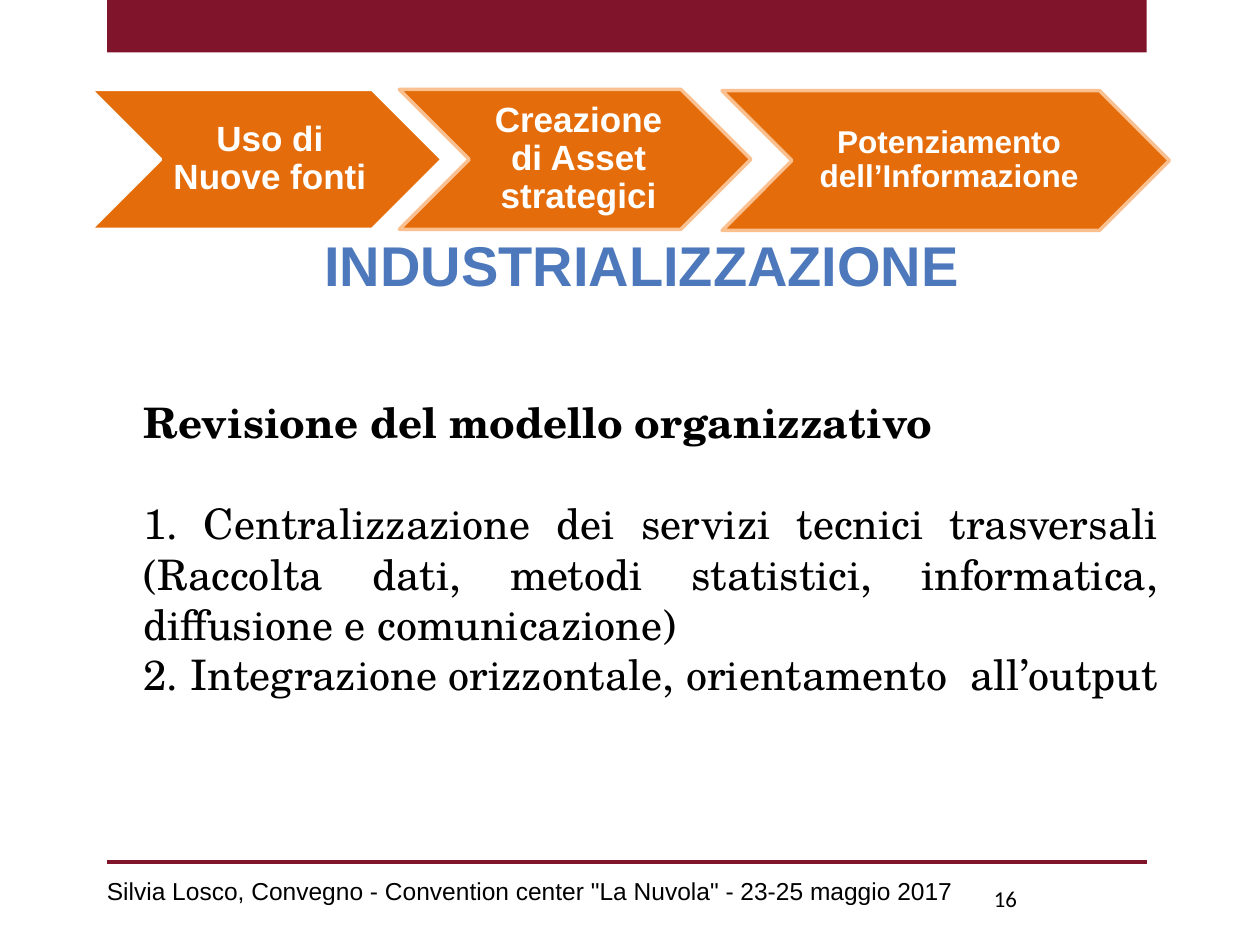
from dataclasses import dataclass

from pptx import Presentation
from pptx.dml.color import RGBColor
from pptx.enum.shapes import MSO_CONNECTOR, MSO_SHAPE
from pptx.enum.text import MSO_ANCHOR, MSO_AUTO_SIZE, PP_ALIGN
from pptx.oxml.ns import qn
from pptx.util import Pt

COLORS = {
    "burgundy": "7F142A",
    "orange": "E46C0A",
    "peach": "FAC090",
    "white": "FFFFFF",
    "black": "000000",
    "blue": "4D79BC",
}
BAR_LEFT, BAR_RIGHT = 61.2, 655.2


@dataclass
class Box:
    left: float
    top: float
    width: float
    height: float


@dataclass
class TextStyle:
    font: str
    size: float
    color: str
    bold: bool = False
    align: PP_ALIGN = PP_ALIGN.LEFT


@dataclass
class Step:
    text: str
    box: Box
    outline: str
    size: float


STEPS = [
    Step("Uso di Nuove fonti", Box(51.8, 51.1, 200.9, 79.9), "white", 20),
    Step("Creazione di Asset strategici", Box(228.2, 51.1, 200.9, 79.9), "peach", 20),
    Step("Potenziamento dell’Informazione", Box(412.6, 51.8, 255.6, 79.9), "peach", 18),
]
BODY_LINES = [
    "1. Centralizzazione dei servizi tecnici trasversali (Raccolta dati, "
    "metodi statistici, informatica, diffusione e comunicazione)",
    "2. Integrazione orizzontale, orientamento  all’output",
]


def rgb(name: str) -> RGBColor:
    return RGBColor.from_string(COLORS[name])


def place(shape, box: Box) -> None:
    shape.left, shape.top = Pt(box.left), Pt(box.top)
    shape.width, shape.height = Pt(box.width), Pt(box.height)


def write(paragraph, text: str, style: TextStyle) -> None:
    paragraph.alignment = style.align
    run = paragraph.add_run()
    run.text = text
    run.font.name = style.font
    run.font.size = Pt(style.size)
    run.font.bold = style.bold
    run.font.color.rgb = rgb(style.color)


def set_up_frame(frame, anchor=MSO_ANCHOR.TOP) -> None:
    frame.word_wrap = True
    frame.auto_size = MSO_AUTO_SIZE.NONE
    frame.vertical_anchor = anchor


def add_label(slide, text: str, box: Box, style: TextStyle) -> None:
    label = slide.shapes.add_textbox(0, 0, 0, 0)
    place(label, box)
    set_up_frame(label.text_frame)
    write(label.text_frame.paragraphs[0], text, style)


def add_filled_shape(slide, kind: MSO_SHAPE, box: Box, fill: str):
    shape = slide.shapes.add_shape(kind, 0, 0, 0, 0)
    place(shape, box)
    shape.shadow.inherit = False
    shape.fill.solid()
    shape.fill.fore_color.rgb = rgb(fill)
    return shape


def add_step(slide, step: Step) -> None:
    chevron = add_filled_shape(slide, MSO_SHAPE.CHEVRON, step.box, "orange")
    chevron.line.color.rgb = rgb(step.outline)
    chevron.line.width = Pt(2)
    frame = chevron.text_frame
    set_up_frame(frame, MSO_ANCHOR.MIDDLE)
    frame.margin_left = Pt(6)
    frame.margin_right = frame.margin_top = frame.margin_bottom = Pt(2)
    paragraph = frame.paragraphs[0]
    paragraph.line_spacing = 0.9
    write(paragraph, step.text,
          TextStyle("Arial", step.size, "white", True, PP_ALIGN.CENTER))


def add_body_line(paragraph, text: str, space_before: float, bold: bool = False) -> None:
    properties = paragraph._p.get_or_add_pPr()
    properties.set("marL", "0")
    properties.set("indent", "0")
    properties.append(properties.makeelement(qn("a:buNone"), {}))
    paragraph.space_before = Pt(space_before)
    write(paragraph, text,
          TextStyle("TeX Gyre Schola", 24, "black", bold, PP_ALIGN.JUSTIFY))


def main() -> None:
    presentation = Presentation()
    presentation.slide_width, presentation.slide_height = Pt(720), Pt(540)
    slide = presentation.slides.add_slide(presentation.slide_layouts[1])

    # Top bar and footer rule
    bar_width = BAR_RIGHT - BAR_LEFT
    bar = add_filled_shape(slide, MSO_SHAPE.RECTANGLE,
                           Box(BAR_LEFT, 0, bar_width, 30), "burgundy")
    bar.line.fill.background()
    rule = slide.shapes.add_connector(MSO_CONNECTOR.STRAIGHT, Pt(BAR_LEFT), Pt(492.5),
                                      Pt(BAR_RIGHT), Pt(492.5))
    rule.line.color.rgb = rgb("burgundy")
    rule.line.width = Pt(2)
    effects = rule._element.spPr
    effects.append(effects.makeelement(qn("a:effectLst"), {}))

    # Footer texts
    add_label(slide, "16", Box(560.9, 501.8, 137.5, 28.8),
              TextStyle("Calibri", 13, "black"))
    add_label(slide, 'Silvia Losco, Convegno - Convention center "La Nuvola" - 23-25 maggio 2017',
              Box(54, 496.8, 542.2, 43.2), TextStyle("Arial", 14, "black"))

    # Process steps
    for step in STEPS:
        add_step(slide, step)

    # Title
    title = slide.shapes.title
    place(title, Box(175, 128.2, 383.8, 46.1))
    set_up_frame(title.text_frame)
    write(title.text_frame.paragraphs[0], "INDUSTRIALIZZAZIONE",
          TextStyle("Arial", 32, "blue", True, PP_ALIGN.CENTER))

    # Heading and numbered points
    body = slide.placeholders[1]
    place(body, Box(74.9, 223.2, 594, 181.4))
    frame = body.text_frame
    set_up_frame(frame)
    add_body_line(frame.paragraphs[0], "Revisione del modello organizzativo", 0, True)
    for text, space_before in zip(BODY_LINES, (28.8, 0)):
        add_body_line(frame.add_paragraph(), text, space_before)

    presentation.save("out.pptx")


if __name__ == "__main__":
    main()
